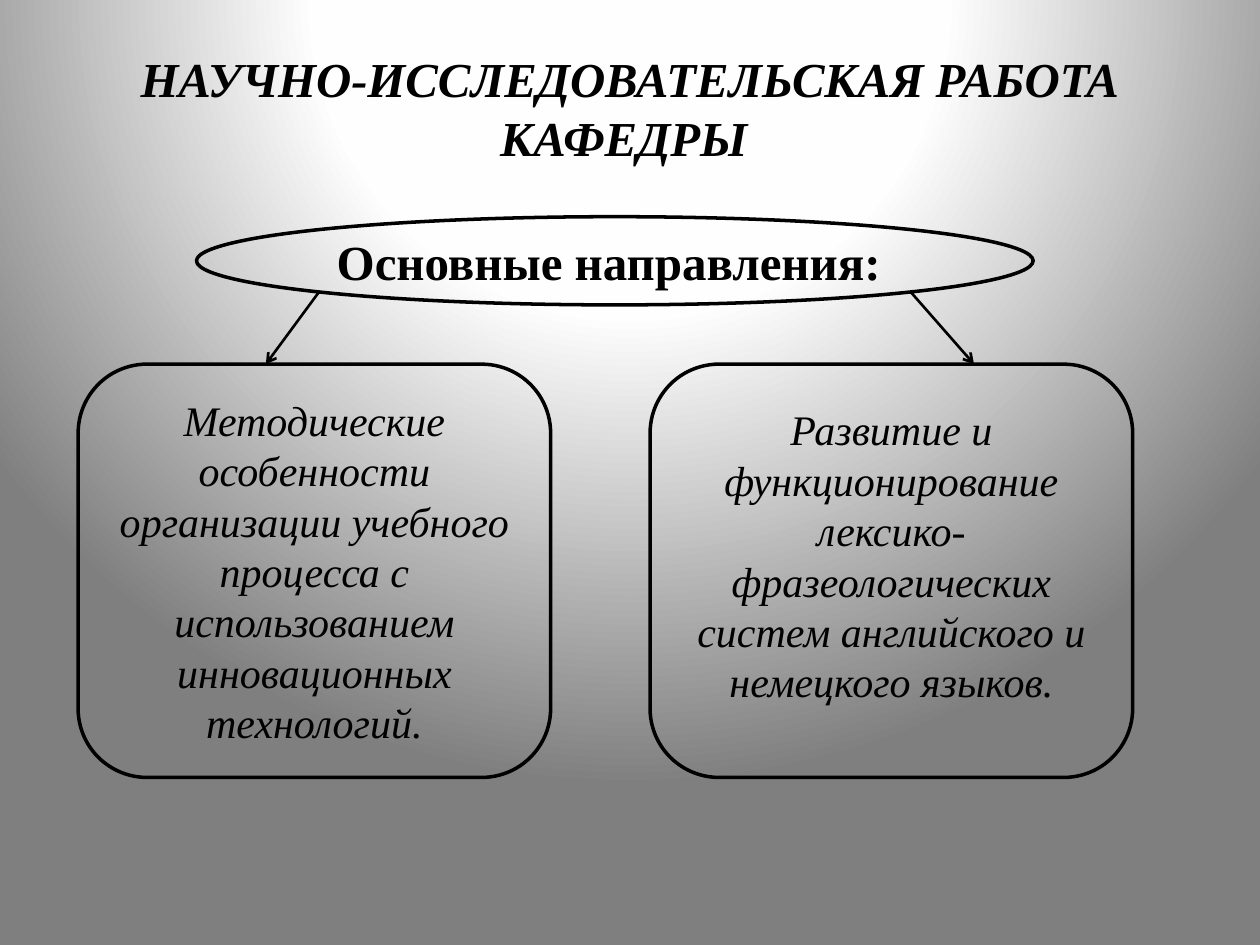
from dataclasses import dataclass

from lxml.etree import SubElement
from pptx import Presentation
from pptx.dml.color import RGBColor as Rgb
from pptx.enum.shapes import MSO_CONNECTOR as Link, MSO_SHAPE as Kind
from pptx.enum.text import MSO_ANCHOR as Anchor, PP_ALIGN as Align
from pptx.oxml import parse_xml
from pptx.oxml.ns import nsdecls, qn
from pptx.slide import Slide
from pptx.util import Inches, Pt


@dataclass(frozen=True)
class Theme:
    font: str = "Times New Roman"
    ink: Rgb = Rgb(0, 0, 0)
    stops: tuple = ((0, "FFFFFF"), (40, "FEFEFE"), (100, "7F7F7F"))
    title: float = 27.9
    lead: float = 28
    body: float = 24
    edge: float = 2
    arrow: float = 1.5


@dataclass(frozen=True)
class Node:
    kind: Kind
    box: tuple
    text: str
    size: float
    bold: bool = False
    italic: bool = False
    foot: float = 0.05  # bottom inset


@dataclass(frozen=True)
class Arrow:
    start: tuple
    end: tuple


THEME = Theme()
TOP, HIGH = 2.89, 3.28

NODES = (
    Node(Kind.ROUNDED_RECTANGLE, (0.62, TOP, 3.75, HIGH),
         "Методические особенности организации учебного процесса "
         "с использованием инновационных технологий.",
         THEME.body, italic=True),
    Node(Kind.ROUNDED_RECTANGLE, (5.16, TOP, 3.83, HIGH),
         "Развитие и функционирование лексико-фразеологических систем "
         "английского и немецкого языков.",
         THEME.body, italic=True, foot=0.3),
    Node(Kind.OVAL, (1.56, 1.72, 6.64, 0.7),
         "Основные направления: ", THEME.lead, bold=True),
)
ARROWS = (
    Arrow((2.53, 2.32), (2.11, TOP)),
    Arrow((7.23, 2.32), (7.73, TOP)),
)


def paint(slide: Slide) -> None:
    """Fill the background with a round gradient centred above the slide."""
    fill = slide.background.fill
    fill.gradient()
    stops = "".join(
        f'<a:gs pos="{pos * 1000}"><a:srgbClr val="{tone}"/></a:gs>'
        for pos, tone in THEME.stops)
    grad = parse_xml(
        f'<a:gradFill {nsdecls("a")} rotWithShape="1"><a:gsLst>{stops}</a:gsLst>'
        '<a:path path="circle"><a:fillToRect l="50000" t="-80000" '
        'r="50000" b="180000"/></a:path></a:gradFill>')
    old = slide.background._cSld.find(".//" + qn("a:gradFill"))
    old.getparent().replace(old, grad)


def write(shape, text: str, size: float, bold: bool, italic: bool,
          foot: float) -> None:
    frame = shape.text_frame
    frame.text = text
    frame.word_wrap = True
    frame.vertical_anchor = Anchor.MIDDLE
    frame.margin_bottom = Inches(foot)
    para = frame.paragraphs[0]
    para.alignment = Align.CENTER
    for run in para.runs:
        font = run.font
        font.name, font.size = THEME.font, Pt(size)
        font.bold, font.italic = bold, italic
        font.color.rgb = THEME.ink


def draw_title(slide: Slide, text: str) -> None:
    box = slide.shapes.add_textbox(*map(Inches, (0.5, 0.3, 9, 1.25)))
    write(box, text, THEME.title, True, True, 0.2)
    box.text_frame.paragraphs[0].line_spacing = Pt(33.7)


def draw_node(slide: Slide, node: Node) -> None:
    shape = slide.shapes.add_shape(node.kind, *map(Inches, node.box))
    shape.shadow.inherit = False
    shape.fill.background()
    shape.line.color.rgb = THEME.ink
    shape.line.width = Pt(THEME.edge)
    write(shape, node.text, node.size, node.bold, node.italic, node.foot)


def draw_arrow(slide: Slide, arrow: Arrow) -> None:
    ends = map(Inches, arrow.start + arrow.end)
    link = slide.shapes.add_connector(Link.STRAIGHT, *ends)
    link.line.color.rgb = THEME.ink
    link.line.width = Pt(THEME.arrow)
    props = link._element.spPr
    SubElement(props.find(qn("a:ln")), qn("a:tailEnd"), type="arrow")
    SubElement(props, qn("a:effectLst"))


def main() -> None:
    deck = Presentation()
    deck.slide_width, deck.slide_height = Inches(10), Inches(7.5)
    slide = deck.slides.add_slide(deck.slide_layouts[6])

    # Background and heading
    paint(slide)
    draw_title(slide, "НАУЧНО-ИССЛЕДОВАТЕЛЬСКАЯ РАБОТА КАФЕДРЫ ")

    # Research areas and the arrows to them
    for node in NODES:
        draw_node(slide, node)
    for arrow in ARROWS:
        draw_arrow(slide, arrow)

    deck.save("out.pptx")


if __name__ == "__main__":
    main()
